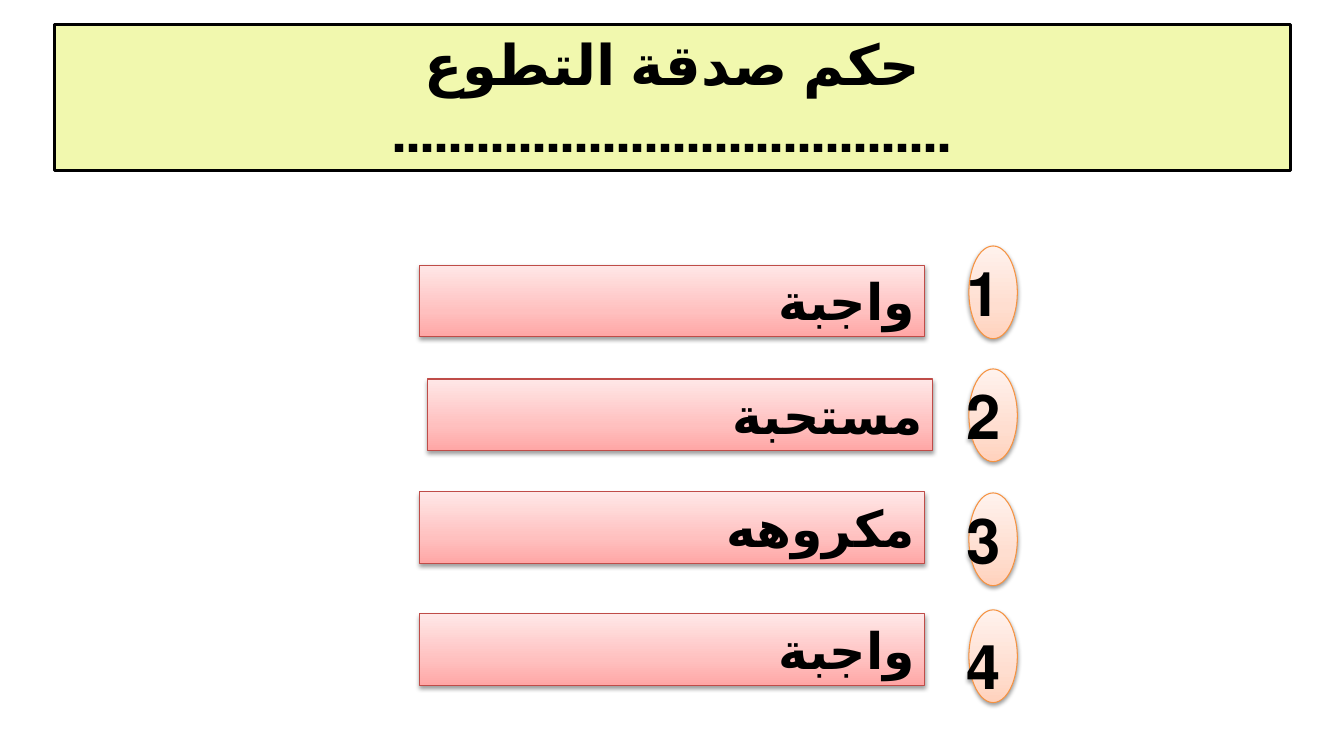
"""Build the slide on the rulings of voluntary charity."""
from copy import deepcopy
from dataclasses import dataclass

from lxml import etree
from pptx import Presentation
from pptx import util as u
from pptx.dml.color import RGBColor
from pptx.enum import lang, shapes, text
from pptx.oxml.ns import qn

EMU_PER_PX = 9144
COLORS = {"text": "000000", "title_fill": "F1F8AE", "title_line": "000000",
          "badge_line": "F69240", "bar_line": "BF4C48", "shadow": "000000"}
GRADIENTS = {"badge": ("FFD2BD", "FFDED0", "FFF2ED"),
             "bar": ("FFA6A5", "FFC0BF", "FFE7E7")}
STOPS = (0, 0.35, 1)
FONT = "Calibri"
TITLE_LINES = ("حكم صدقة التطوع", "." * 40)
BADGE_LEFT, BADGE_WIDTH, BADGE_HEIGHT = 961, 48, 92
BAR_WIDTH, BAR_HEIGHT = 501, 71


@dataclass(frozen=True)
class Ruling:
    number: str
    label: str
    badge_top: int
    bar_left: int
    bar_top: int
    badge_anchor: text.MSO_ANCHOR = text.MSO_ANCHOR.MIDDLE


RULINGS = (
    Ruling("1", "واجبة", 244, 416, 263),
    Ruling("2", "مستحبة", 366, 424, 376),
    Ruling("3", "مكروهه", 489, 416, 488),
    Ruling("4", "واجبة", 605, 416, 609, text.MSO_ANCHOR.TOP),
)


def px(length: int) -> u.Emu:
    return u.Emu(length * EMU_PER_PX)


def color(name: str) -> RGBColor:
    return RGBColor.from_string(COLORS[name])


def write(box, lines: tuple[str, ...], size: int, align, anchor) -> None:
    frame = box.text_frame
    frame.text = "\n".join(lines)
    frame.word_wrap = True
    frame.vertical_anchor = anchor
    for para in frame.paragraphs:
        para.alignment = align
        para._p.get_or_add_pPr().set("rtl", "1")
        para.font.name = FONT
        para.font.size = u.Pt(size)
        para.font.bold = True
        para.font.color.rgb = color("text")
        for span in para.runs:
            span.font.language_id = lang.MSO_LANGUAGE_ID.ARABIC


def add_shadow(box) -> None:
    box.shadow.inherit = False
    effects = box._element.spPr.find(qn("a:effectLst"))
    shadow = etree.SubElement(effects, qn("a:outerShdw"), blurRad="40000",
                              dist="20000", dir="5400000", rotWithShape="0")
    tint = etree.SubElement(shadow, qn("a:srgbClr"), val=COLORS["shadow"])
    etree.SubElement(tint, qn("a:alpha"), val="38000")


def add_gradient_shape(page, kind, style: str, left: int, top: int, width: int, height: int):
    box = page.shapes.add_shape(kind, px(left), px(top), px(width), px(height))
    box.fill.gradient()
    box.fill.gradient_angle = 90
    stop_list = next(box._element.spPr.iter(qn("a:gsLst")))
    stop_list.insert(1, deepcopy(stop_list[0]))
    for stop, position, shade in zip(box.fill.gradient_stops, STOPS, GRADIENTS[style]):
        stop.position = position
        stop.color.rgb = RGBColor.from_string(shade)
    box.line.color.rgb = color(f"{style}_line")
    box.line.width = u.Pt(0.75)
    add_shadow(box)
    return box


def add_title(page) -> None:
    title = page.shapes.title
    title.left, title.top, title.width, title.height = map(px, (54, 24, 1226, 145))
    title.fill.solid()
    title.fill.fore_color.rgb = color("title_fill")
    title.line.color.rgb = color("title_line")
    title.line.width = u.Pt(2)
    write(title, TITLE_LINES, 40, text.PP_ALIGN.CENTER, text.MSO_ANCHOR.TOP)
    title.text_frame.auto_size = text.MSO_AUTO_SIZE.SHAPE_TO_FIT_TEXT


def add_ruling(page, ruling: Ruling) -> None:
    badge = add_gradient_shape(page, shapes.MSO_SHAPE.OVAL, "badge", BADGE_LEFT,
                               ruling.badge_top, BADGE_WIDTH, BADGE_HEIGHT)
    write(badge, (ruling.number,), 44, text.PP_ALIGN.CENTER, ruling.badge_anchor)
    bar = add_gradient_shape(page, shapes.MSO_SHAPE.RECTANGLE, "bar", ruling.bar_left,
                             ruling.bar_top, BAR_WIDTH, BAR_HEIGHT)
    write(bar, (ruling.label,), 36, text.PP_ALIGN.RIGHT, text.MSO_ANCHOR.TOP)
    bar.text_frame.auto_size = text.MSO_AUTO_SIZE.SHAPE_TO_FIT_TEXT


def main() -> None:
    deck = Presentation()
    deck.slide_width, deck.slide_height = px(1333), px(750)
    page = deck.slides.add_slide(deck.slide_layouts[5])
    add_title(page)
    for ruling in RULINGS:
        add_ruling(page, ruling)
    deck.save("out.pptx")


if __name__ == "__main__":
    main()
